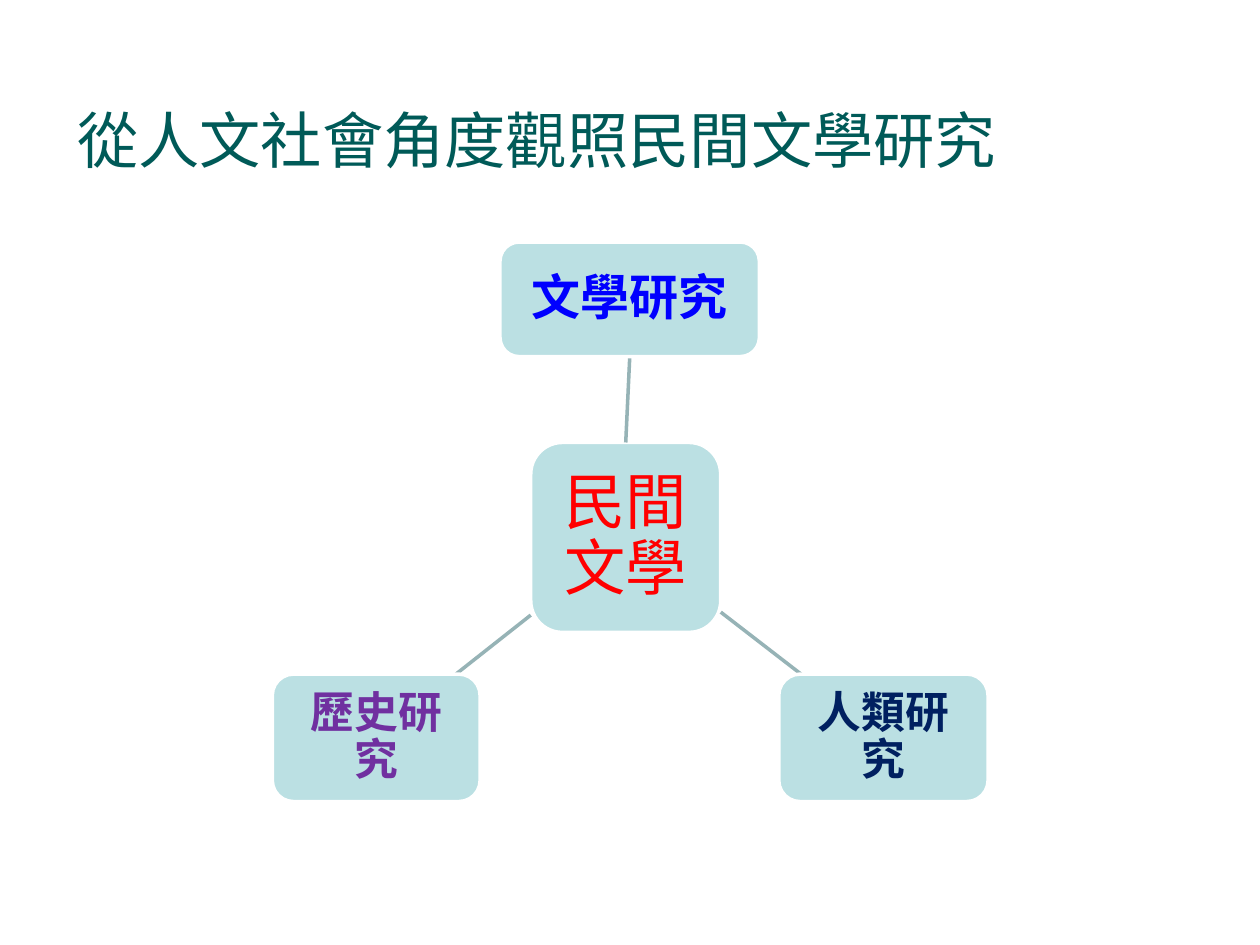
import pptx
import pptx.util
import pptx.dml.color
import pptx.enum.shapes
import pptx.enum.text
import pptx.oxml.ns
import lxml.etree
from dataclasses import dataclass

Cm, Pt = pptx.util.Cm, pptx.util.Pt
RGB = pptx.dml.color.RGBColor.from_string
ALIGN = pptx.enum.text.PP_ALIGN
MIDDLE = pptx.enum.text.MSO_ANCHOR.MIDDLE


@dataclass
class Theme:
    font: str = "Arial"
    title: str = "005A58"
    box: str = "BBE0E3"
    outline: str = "FFFFFF"
    spoke: str = "96B3B6"
    core: str = "FF0000"
    literature: str = "0000FF"
    anthropology: str = "002060"
    history: str = "7030A0"
    large: int = 35
    medium: int = 28
    small: int = 25
    line: int = 2


theme = Theme()


def write(frame, text, size, color, align, bold=False):
    frame.word_wrap = True
    frame.auto_size = pptx.enum.text.MSO_AUTO_SIZE.NONE
    frame.vertical_anchor = MIDDLE
    paragraph = frame.paragraphs[0]
    paragraph.alignment = align
    run = paragraph.add_run()
    run.text = text
    run.font.name = theme.font
    run.font.size = Pt(size)
    run.font.bold = bold
    run.font.color.rgb = RGB(color)
    return paragraph


def add_box(text, place, size, color, inset, bold):
    box = slide.shapes.add_shape(
        pptx.enum.shapes.MSO_SHAPE.ROUNDED_RECTANGLE, *map(Cm, place))
    box.shadow.inherit = False
    box.fill.solid()
    box.fill.fore_color.rgb = RGB(theme.box)
    box.line.color.rgb = RGB(theme.outline)
    box.line.width = Pt(theme.line)
    frame = box.text_frame
    frame.margin_left = frame.margin_right = Cm(inset)
    frame.margin_top = frame.margin_bottom = Cm(inset)
    write(frame, text, size, color, ALIGN.CENTER, bold).line_spacing = 0.9
    return box


presentation = pptx.Presentation()
presentation.slide_width, presentation.slide_height = Cm(25.4), Cm(19.05)
slide = presentation.slides.add_slide(presentation.slide_layouts[5])

# Title
title = slide.shapes.title
title.left, title.top, title.width, title.height = map(Cm, (1.3, 1.93, 22.86, 1.75))
write(title.text_frame, "從人文社會角度觀照民間文學研究", theme.large, theme.title, ALIGN.LEFT)

# Core of the diagram
core = add_box("民間文學", (10.7, 8.92, 3.83, 3.83), theme.large, theme.core, 0.44, False)

# Fields around the core: text, place, size, colour, spoke, joined to side middles
fields = [
    ("文學研究", (10.08, 4.88, 5.23, 2.31), theme.medium, theme.literature,
     (12.61, 8.92, 12.7, 7.19), True),
    ("人類研究", (15.7, 13.59, 4.22, 2.57), theme.small, theme.anthropology,
     (14.53, 12.34, 16.15, 13.59), False),
    ("歷史研究", (5.49, 13.59, 4.19, 2.57), theme.small, theme.history,
     (10.7, 12.4, 9.19, 13.59), False),
]
for text, place, size, color, ends, joined in fields:
    spoke = slide.shapes.add_connector(
        pptx.enum.shapes.MSO_CONNECTOR.STRAIGHT, *map(Cm, ends))
    spoke.line.color.rgb = RGB(theme.spoke)
    spoke.line.width = Pt(theme.line)
    lxml.etree.SubElement(spoke._element.spPr, pptx.oxml.ns.qn("a:effectLst"))
    field = add_box(text, place, size, color, 0.25, True)
    if joined:
        spoke.begin_connect(core, 0)
        spoke.end_connect(field, 2)

presentation.save("out.pptx")
